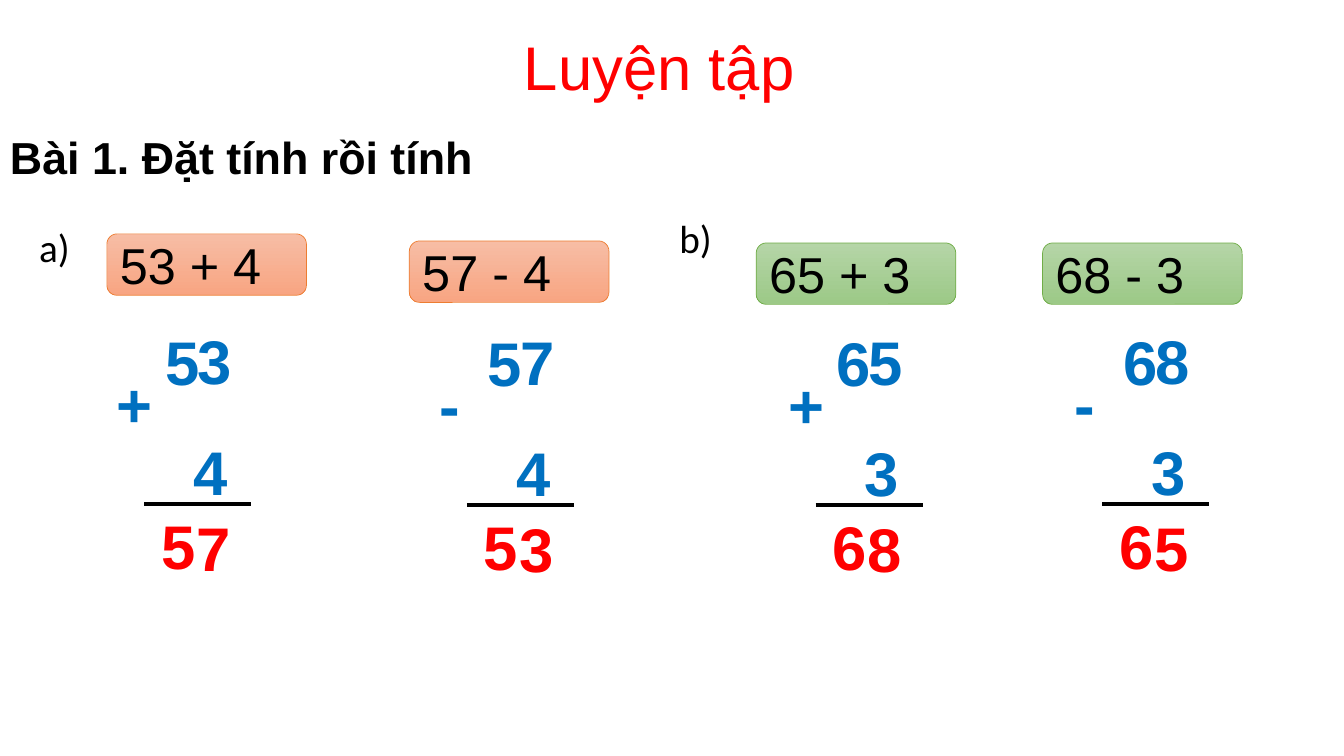
from lxml.etree import SubElement
from pptx import Presentation
from pptx.dml.color import RGBColor
from pptx.enum.shapes import MSO_CONNECTOR, MSO_SHAPE
from pptx.enum.text import MSO_ANCHOR, MSO_AUTO_SIZE, PP_ALIGN
from pptx.oxml.ns import qn
from pptx.util import Inches, Pt

CELL = Inches(0.1)  # the slide is a grid of 133.3 columns by 75 rows
BLACK, RED, BLUE = "000000", "FF0000", "0070C0"
ORANGE = ("F7BDA5", "F8A582", "ED7D31")  # gradient top, gradient bottom, border
GREEN = ("B5D5A7", "9CC987", "70AD47")
DIGIT_HEIGHT = 8.4

# first number, sign, second number, result, card column and row,
# sum line column and row, card colours
EXERCISES = [
    ("53", "+", "4", "57", 10.6, 23.2, 14.3, 50.0, ORANGE),
    ("57", "-", "4", "53", 40.6, 23.9, 46.3, 50.1, ORANGE),
    ("65", "+", "3", "68", 75.0, 24.1, 80.9, 50.1, GREEN),
    ("68", "-", "3", "65", 103.4, 24.1, 109.3, 50.0, GREEN),
]


def grid(*cells):
    """Turn columns and rows into slide lengths."""
    return [round(cell * CELL) for cell in cells]


def rgb(hex_colour):
    return RGBColor.from_string(hex_colour)


def write(frame, text, size, colour, font="Arial", bold=False):
    frame.text = text
    paragraph = frame.paragraphs[0]
    paragraph.font.name = font
    paragraph.font.size = Pt(size)
    paragraph.font.bold = bold
    paragraph.font.color.rgb = rgb(colour)
    return paragraph


def add_title(slide, text):
    title = slide.shapes.title
    title.left, title.top, title.width, title.height = grid(7.9, -0.2, 115, 14.5)
    frame = title.text_frame
    frame.auto_size = MSO_AUTO_SIZE.NONE
    frame.vertical_anchor = MSO_ANCHOR.MIDDLE
    heading = write(frame, text, 44, RED)
    heading.alignment = PP_ALIGN.CENTER
    heading.line_spacing = 0.9


def add_label(slide, text, box, size, colour=BLACK, font="Arial", bold=False):
    frame = slide.shapes.add_textbox(*grid(*box)).text_frame
    frame.word_wrap = True
    frame.auto_size = MSO_AUTO_SIZE.SHAPE_TO_FIT_TEXT
    write(frame, text, size, colour, font, bold)


def add_card(slide, expression, column, row, colours):
    top, bottom, border = colours
    card = slide.shapes.add_shape(
        MSO_SHAPE.ROUNDED_RECTANGLE, *grid(column, row, 19.8, 6.1))
    card.shadow.inherit = False
    card.fill.gradient()
    card.fill.gradient_angle = 270
    for stop, colour in zip(card.fill.gradient_stops, (top, bottom)):
        stop.color.rgb = rgb(colour)
    card.line.color.rgb = rgb(border)
    card.line.width = Pt(0.5)
    card.text_frame.vertical_anchor = MSO_ANCHOR.MIDDLE
    paragraph = write(card.text_frame, expression, 36, BLACK)
    paragraph.alignment = PP_ALIGN.LEFT


def add_sum_line(slide, column, row):
    sum_line = slide.shapes.add_connector(
        MSO_CONNECTOR.STRAIGHT, *grid(column, row, column + 10.6, row))
    sum_line.line.color.rgb = rgb(BLACK)
    sum_line.line.width = Pt(3)
    SubElement(sum_line._element.spPr, qn("a:effectLst"))


def add_column_sum(slide, first, sign, second, result, column, row):
    """Set out one calculation around its sum line, which starts at column, row."""
    symbols = [
        (first[0], 1.1, -18.4, 6.5, BLUE),
        (first[1], 4.3, -18.5, 7.0, BLUE),
        (second, 3.9, -7.4, 5.7, BLUE),
        (sign, -3.7, -14.2, 5.6, BLUE),
        (result[0], 0.7, -0.1, 5.5, RED),
        (result[1], 4.2, 0.1, 5.5, RED),
    ]
    for symbol, across, down, width, colour in symbols:
        box = (column + across, row + down, width, DIGIT_HEIGHT)
        add_label(slide, symbol, box, 44, colour, bold=True)
    add_sum_line(slide, column, row)


def main():
    presentation = Presentation()
    presentation.slide_width = Inches(13.33)
    presentation.slide_height = Inches(7.5)
    slide = presentation.slides.add_slide(presentation.slide_layouts[5])

    add_title(slide, "Luyện tập")
    add_label(slide, "Bài 1. Đặt tính rồi tính", (0, 12.4, 78.2, 6.4), 32, bold=True)
    for (first, sign, second, result, card_column, card_row,
         line_column, line_row, colours) in EXERCISES:
        add_column_sum(slide, first, sign, second, result, line_column, line_row)
        add_card(slide, f"{first} {sign} {second}", card_column, card_row, colours)
    add_label(slide, "a)", (2.9, 21.7, 5.3, 5.7), 28, font="Calibri")
    add_label(slide, "b)", (66.4, 20.8, 5.3, 5.7), 28, font="Calibri")

    presentation.save("out.pptx")


if __name__ == "__main__":
    main()
